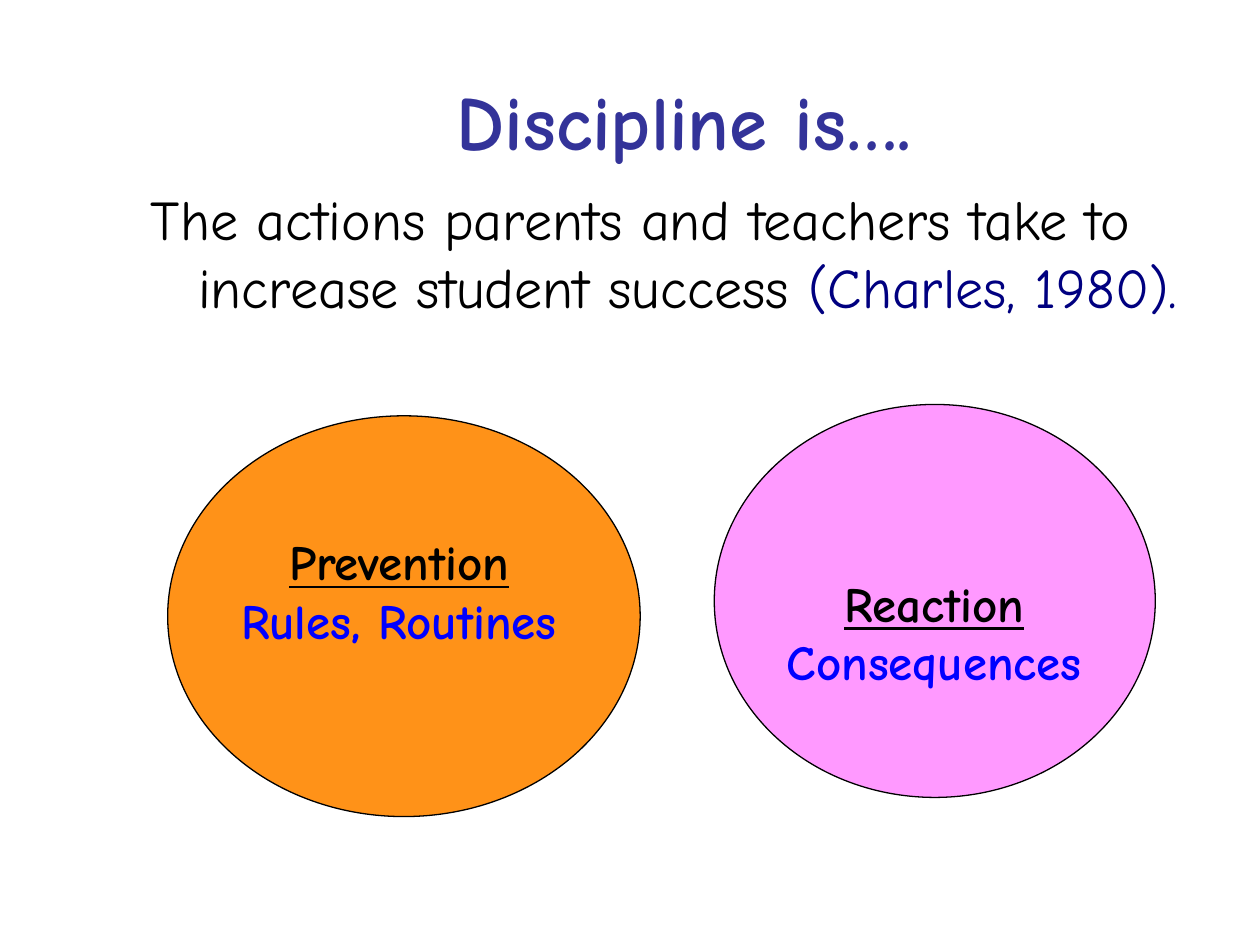
import pptx
import pptx.dml.color
import pptx.enum.shapes
import pptx.enum.text
import pptx.util

Pt = pptx.util.Pt
ALIGN = pptx.enum.text.PP_ALIGN
ANCHOR = pptx.enum.text.MSO_ANCHOR

THEME = {
    "font": "Comic Neue",
    "title": "333399", "ink": "000000", "cite": "000080", "detail": "0000FF",
    "orange": "FF9218", "pink": "FF99FF",
    "title_size": 44, "body_size": 32, "label_size": 28,
}

# Content: each paragraph is a list of (text, colour, underlined); "\n" is a line break
TITLE = [[("Discipline is…. ", "title", False)]]
DEFINITION = [[
    ("The actions parents and teachers take to increase student success ", "ink", False),
    ("(Charles, 1980).", "cite", False),
]]
# Boxes are left, top, width, height in points
TITLE_BOX = (77.8, 30.2, 642.2, 76.3)
DEFINITION_BOX = (79.2, 102.2, 612, 357.1)
CIRCLES = [
    {"fill": "orange", "box": (95.8, 237.6, 270, 229),
     "label_box": (120, 300.2, 216, 108.7),
     "label": [[("Prevention", "ink", True)], [("Rules, Routines", "detail", False)]]},
    {"fill": "pink", "box": (408.2, 231.1, 252, 224.6),
     "label_box": (419.8, 324, 228.2, 74.2),
     "label": [[("Reaction", "ink", True), ("\n", "ink", True),
                ("Consequences", "detail", False)]]},
]


def color(name):
    return pptx.dml.color.RGBColor.from_string(THEME[name])


def write(frame, paragraphs, size, bold=False, align=ALIGN.LEFT,
          anchor=ANCHOR.TOP, hanging=0):
    frame.word_wrap = True
    frame.auto_size = pptx.enum.text.MSO_AUTO_SIZE.NONE
    frame.vertical_anchor = anchor
    for index, spans in enumerate(paragraphs):
        para = frame.add_paragraph() if index else frame.paragraphs[0]
        para.alignment = align
        if hanging:
            properties = para._p.get_or_add_pPr()
            properties.set("marL", str(Pt(hanging)))
            properties.set("indent", str(-Pt(hanging)))
        for text, ink, underlined in spans:
            if text == "\n":
                para.add_line_break()
                continue
            span = para.add_run()
            span.text = text
            span.font.name = THEME["font"]
            span.font.size = Pt(THEME[size])
            span.font.bold = bold
            span.font.underline = underlined
            span.font.color.rgb = color(ink)


deck = pptx.Presentation()
deck.slide_width, deck.slide_height = Pt(720), Pt(540)
page = deck.slides.add_slide(deck.slide_layouts[5])

# Title
title = page.shapes.title
title.left, title.top, title.width, title.height = map(Pt, TITLE_BOX)
write(title.text_frame, TITLE, "title_size", bold=True,
      align=ALIGN.CENTER, anchor=ANCHOR.MIDDLE)

# Definition
definition = page.shapes.add_textbox(*map(Pt, DEFINITION_BOX))
write(definition.text_frame, DEFINITION, "body_size", hanging=27)

# Circles with their labels
for circle in CIRCLES:
    oval = page.shapes.add_shape(pptx.enum.shapes.MSO_SHAPE.OVAL, *map(Pt, circle["box"]))
    oval.shadow.inherit = False
    oval.fill.solid()
    oval.fill.fore_color.rgb = color(circle["fill"])
    oval.line.color.rgb = color("ink")
    oval.line.width = Pt(0.75)
for circle in CIRCLES:
    label = page.shapes.add_textbox(*map(Pt, circle["label_box"]))
    write(label.text_frame, circle["label"], "label_size", bold=True, align=ALIGN.CENTER)

deck.save("out.pptx")
